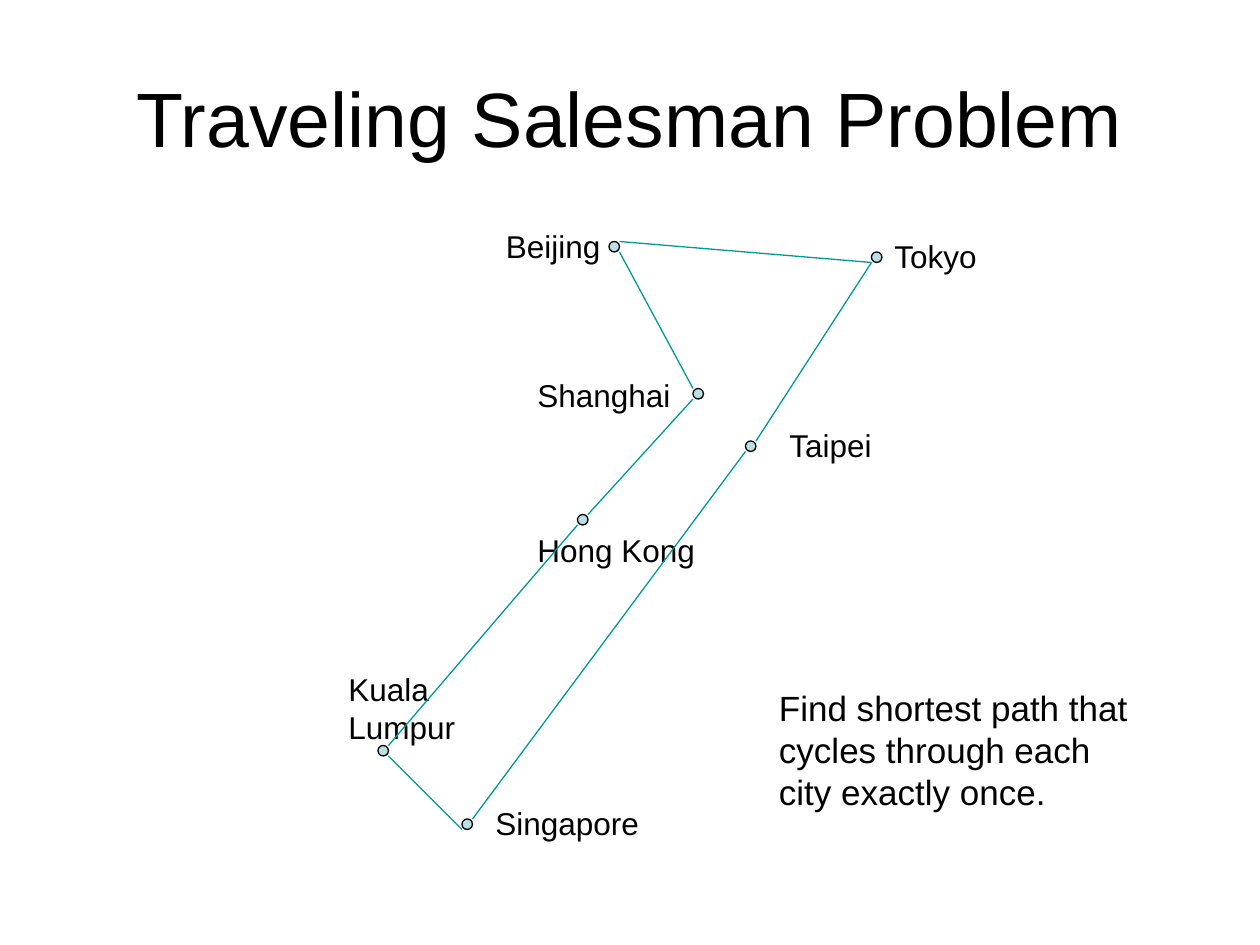
"""Draws a slide with a round trip through seven Asian cities."""
from collections import namedtuple
from lxml.etree import SubElement
from pptx import Presentation
from pptx.dml.color import RGBColor
from pptx.enum.shapes import MSO_CONNECTOR, MSO_SHAPE
from pptx.enum.text import MSO_ANCHOR, MSO_AUTO_SIZE, PP_ALIGN
from pptx.oxml.ns import qn
from pptx.util import Inches, Pt

BLACK = RGBColor(0x00, 0x00, 0x00)
PALE = RGBColor(0xBB, 0xE0, 0xE3)
TEAL = RGBColor(0x00, 0x99, 0x99)
COLS, ROWS = 120, 90

City = namedtuple("City", "name dot enter leave label")
TOUR = [
    City("Singapore", (44, 78), (1, 0), (0, 1), (46, 76, 17, 4.8)),
    City("Kuala Lumpur", (36, 71), (1, 1), (1, 0), (32, 63.2, 17, 8.4)),
    City("Hong Kong", (55, 49), (0, 1), (1, 0), (50, 50, 18, 4.8)),
    City("Shanghai", (66, 37), (0, 1), (0, 0), (50, 35.2, 17, 4.8)),
    City("Beijing", (58, 23), (1, 1), (1, 0), (47, 21, 12, 4.8)),
    City("Tokyo", (83, 24), (0, 1), (0, 1), (84, 22, 11, 4.8)),
    City("Taipei", (71, 42), (1, 0), (0, 1), (74, 40, 13, 4.8)),
]


class Deck:
    """Holds the style, the grid and the current slide."""

    def __init__(self):
        """Opens a deck with one title-only slide."""
        self.file = Presentation()
        self.file.slide_width, self.file.slide_height = Inches(10), Inches(7.5)
        self.slide = self.file.slides.add_slide(self.file.slide_layouts[5])
        self.shapes = self.slide.shapes
        self.font, self.line = "Arial", Pt(0.75)

    def grid(self, *cells):
        """Turns column and row pairs into lengths."""
        units = self.file.slide_width / COLS, self.file.slide_height / ROWS
        return [round(cell * units[i % 2]) for i, cell in enumerate(cells)]

    def set_text(self, frame, text, size, align=PP_ALIGN.LEFT):
        """Fills a text frame with one styled paragraph."""
        frame.word_wrap = True
        frame.text = text
        para = frame.paragraphs[0]
        para.alignment = align
        para.font.name, para.font.size = self.font, Pt(size)
        para.font.color.rgb = BLACK

    def title(self, text, box):
        """Moves and fills the title placeholder."""
        shape = self.shapes.title
        shape.left, shape.top, shape.width, shape.height = self.grid(*box)
        shape.text_frame.vertical_anchor = MSO_ANCHOR.MIDDLE
        self.set_text(shape.text_frame, text, 44, PP_ALIGN.CENTER)

    def label(self, text, box, size=18):
        """Adds a text box."""
        frame = self.shapes.add_textbox(*self.grid(*box)).text_frame
        self.set_text(frame, text, size)
        frame.auto_size = MSO_AUTO_SIZE.SHAPE_TO_FIT_TEXT

    def dot(self, cell):
        """Marks a city with a dot one cell wide."""
        shape = self.shapes.add_shape(MSO_SHAPE.OVAL, *self.grid(*cell, 1, 1))
        shape.shadow.inherit = False
        shape.fill.solid()
        shape.fill.fore_color.rgb = PALE
        shape.line.color.rgb, shape.line.width = BLACK, self.line

    def road(self, start, end):
        """Links the leaving corner of one dot to the entry of the next."""
        ends = [a + b for dot, corner in ((start.dot, start.leave), (end.dot, end.enter))
                for a, b in zip(dot, corner)]
        link = self.shapes.add_connector(MSO_CONNECTOR.STRAIGHT, *self.grid(*ends))
        link.line.color.rgb, link.line.width = TEAL, self.line
        SubElement(link._element.spPr, qn("a:effectLst"))


def main():
    """Builds and saves the slide."""
    deck = Deck()
    deck.title("Traveling Salesman Problem", (6, 3.6, 108, 15))
    for city in TOUR:
        deck.dot(city.dot)
    for city in TOUR:
        deck.label(city.name, city.label)
    for start, end in zip(TOUR, TOUR[1:] + TOUR[:1]):
        deck.road(start, end)
    deck.label("Find shortest path that cycles through each city exactly once.",
               (73, 64.8, 38, 13.2), 20)
    deck.file.save("out.pptx")


if __name__ == "__main__":
    main()
